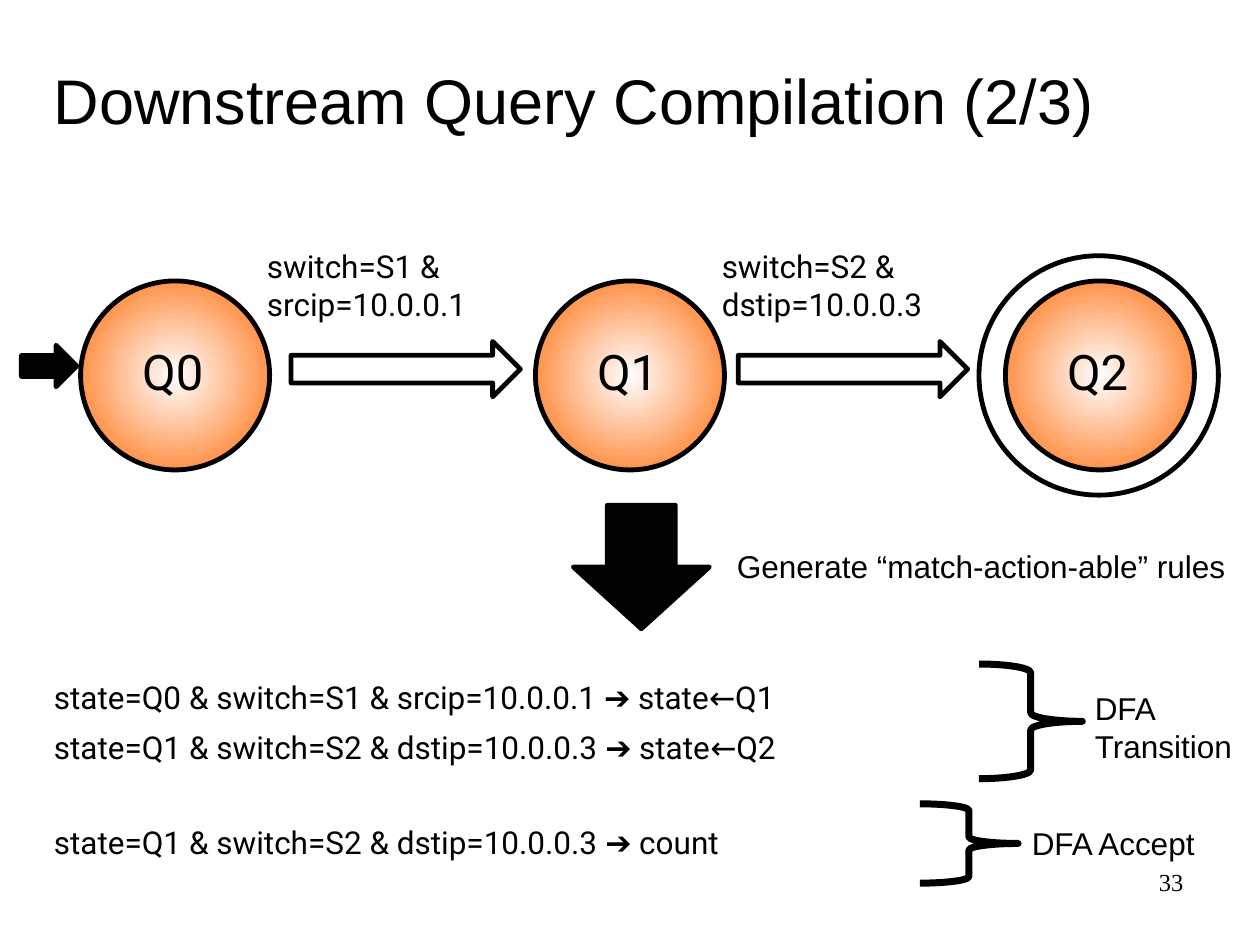
from collections import namedtuple
from dataclasses import dataclass

from lxml import etree
from pptx import Presentation
from pptx.dml.color import RGBColor
from pptx.enum.shapes import MSO_SHAPE
from pptx.enum.text import MSO_ANCHOR, PP_ALIGN
from pptx.oxml.ns import qn
from pptx.util import Inches, Pt

CIRCLE = MSO_SHAPE.OVAL
RIGHT_ARROW = MSO_SHAPE.RIGHT_ARROW
DOWN_ARROW = MSO_SHAPE.DOWN_ARROW
BRACE = MSO_SHAPE.RIGHT_BRACE
TOP, MIDDLE = MSO_ANCHOR.TOP, MSO_ANCHOR.MIDDLE
LEFT, RIGHT = PP_ALIGN.LEFT, PP_ALIGN.RIGHT

Box = namedtuple("Box", "left top width height")


@dataclass(frozen=True)
class Theme:
    ink: RGBColor = RGBColor(0, 0, 0)
    glow: RGBColor = RGBColor(255, 255, 255)
    state: RGBColor = RGBColor(0xFF, 0x66, 0x00)
    sans: str = "Arial"
    code: str = "Roboto"
    serif: str = "Times New Roman"
    title_size: int = 36
    state_size: int = 28
    body_size: int = 18
    number_size: int = 14
    outline: float = 2.75
    brace: float = 4


THEME = Theme()


def inches(box):
    return [Inches(length) for length in box]


def add_text(slide, text, box, *, font=THEME.sans, size=THEME.body_size,
             align=LEFT, anchor=TOP):
    frame = slide.shapes.add_textbox(*inches(box)).text_frame
    frame.word_wrap = True
    frame.vertical_anchor = anchor
    frame.text = text
    for paragraph in frame.paragraphs:
        paragraph.alignment = align
        paragraph.font.name = font
        paragraph.font.size = Pt(size)
        paragraph.font.color.rgb = THEME.ink


def add_outline(slide, kind, box, *, fill=None, line=THEME.outline):
    shape = slide.shapes.add_shape(kind, *inches(box))
    shape.shadow.inherit = False
    shape.line.color.rgb = THEME.ink
    shape.line.width = Pt(line)
    if fill is None:
        shape.fill.background()
    else:
        shape.fill.solid()
        shape.fill.fore_color.rgb = fill
    return shape


def fill_from_centre(shape):
    """Radial gradient, light at the centre."""
    shape.fill.gradient()
    for stop, color in zip(shape.fill.gradient_stops, (THEME.glow, THEME.state)):
        stop.color.rgb = color
    gradient = shape._element.spPr.find(qn("a:gradFill"))
    gradient.remove(gradient.find(qn("a:lin")))
    circle = etree.SubElement(gradient, qn("a:path"), path="circle")
    etree.SubElement(circle, qn("a:fillToRect"),
                     {side: "50000" for side in "ltrb"})


def draw_state(slide, name, box, accepting=False):
    fill_from_centre(add_outline(slide, CIRCLE, box))
    add_text(slide, name, Box(box.left + 0.39, box.top + 0.43, 0.69, 0.57),
             font=THEME.code, size=THEME.state_size)
    if accepting:
        margin = 0.2
        add_outline(slide, CIRCLE, Box(box.left - margin - 0.01, box.top - margin,
                                       box.width + 2 * margin,
                                       box.height + 2 * margin))


def draw_automaton(slide, box):
    # States, the last one accepting
    diameter = 1.5
    state_lefts = (0.47, 4.08, 7.81)
    for number, offset in enumerate(state_lefts):
        draw_state(slide, f"Q{number}",
                   Box(box.left + offset, box.top + 0.2, diameter, diameter),
                   accepting=number == len(state_lefts) - 1)

    # Start arrow and transitions with their conditions
    add_outline(slide, RIGHT_ARROW, Box(box.left, box.top + 0.71, 0.44, 0.33),
                fill=THEME.ink)
    transitions = (
        ("switch=S1 & srcip=10.0.0.1", 2.14, 1.85),
        ("switch=S2 & dstip=10.0.0.3", 5.69, 5.46),
    )
    for condition, arrow_left, label_left in transitions:
        add_outline(slide, RIGHT_ARROW,
                    Box(box.left + arrow_left, box.top + 0.68, 1.82, 0.44))
        add_text(slide, condition,
                 Box(box.left + label_left, box.top - 0.12, 2.61, 0.71),
                 font=THEME.code)


def draw_generation(slide, box):
    add_outline(slide, DOWN_ARROW, Box(box.left, box.top, 1.08, box.height),
                fill=THEME.ink)
    add_text(slide, "Generate “match-action-able” rules",
             Box(box.left + 1.2, box.top + 0.28, box.width - 1.2, 0.4))


def draw_rules(slide, box):
    # Generated rules
    rules = (
        ("state=Q0 & switch=S1 & srcip=10.0.0.1 ➔ state←Q1", 0.06),
        ("state=Q1 & switch=S2 & dstip=10.0.0.3 ➔ state←Q2", 0.46),
        ("state=Q1 & switch=S2 & dstip=10.0.0.3 ➔ count", 1.21),
    )
    for rule, offset in rules:
        add_text(slide, rule, Box(box.left, box.top + offset, 7.65, 0.4),
                 font=THEME.code)

    # Braces naming the kinds of rule
    groups = (
        ("DFA\nTransition", Box(7.44, 0, 0.82, 0.91), Box(8.26, 0.15, 1.41, 0.71)),
        ("DFA Accept", Box(6.97, 1.11, 0.78, 0.63), Box(7.76, 1.22, 1.52, 0.4)),
    )
    for kind, brace, label in groups:
        brace, label = (part._replace(left=box.left + part.left,
                                      top=box.top + part.top)
                        for part in (brace, label))
        add_outline(slide, BRACE, brace, line=THEME.brace)
        add_text(slide, kind, label)


def main():
    deck = Presentation()
    deck.slide_width, deck.slide_height = Inches(10), Inches(7.5)
    slide = deck.slides.add_slide(deck.slide_layouts[6])

    add_text(slide, "Downstream Query Compilation (2/3)",
             Box(0.33, 0.42, 8.82, 0.74), size=THEME.title_size, anchor=MIDDLE)
    draw_automaton(slide, Box(0.17, 2.03, 9.5, 1.9))
    draw_generation(slide, Box(4.55, 4.01, 5.29, 0.98))
    draw_rules(slide, Box(0.33, 5.27, 9.67, 1.74))
    add_text(slide, "33", Box(7.17, 6.83, 2.32, 0.51), font=THEME.serif,
             size=THEME.number_size, align=RIGHT)

    deck.save("out.pptx")


if __name__ == "__main__":
    main()
